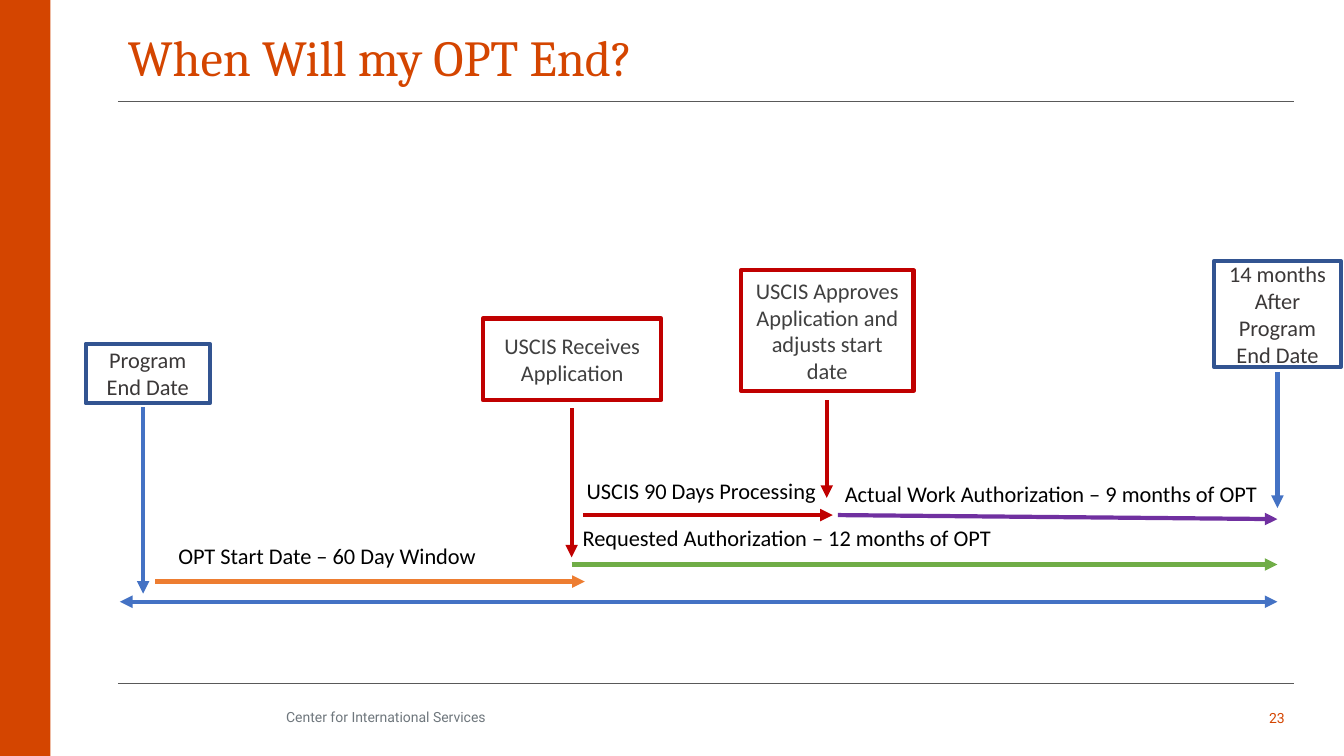
from dataclasses import dataclass

from lxml import etree
from pptx import Presentation
from pptx.dml.color import RGBColor
from pptx.enum import shapes, text
from pptx.oxml import ns
from pptx.slide import Slide
from pptx.util import Inches, Pt


@dataclass(frozen=True)
class Theme:
    orange: str = "D44500"
    grey: str = "6F777D"
    rule: str = "595959"
    blue: str = "4472C4"
    navy: str = "325491"
    red: str = "C00000"
    amber: str = "ED7D31"
    green: str = "70AD47"
    purple: str = "7030A0"
    black: str = "000000"
    date_text: str = "3B3838"
    step_text: str = "404040"
    heading: str = "Cambria"
    body: str = "Calibri"
    footer: str = "Roboto"
    title_size: float = 36
    label_size: float = 16
    footer_size: float = 10
    arrow_width: float = 3
    rule_width: float = 0.5


THEME = Theme()
Box = tuple[float, float, float, float]
Point = tuple[float, float]


@dataclass(frozen=True)
class Label:
    words: str
    box: Box
    color: str = THEME.black
    font: str = THEME.body
    size: float = THEME.label_size
    align: text.PP_ALIGN = text.PP_ALIGN.LEFT
    anchor: text.MSO_ANCHOR = text.MSO_ANCHOR.TOP
    spacing: float = 1.0


@dataclass(frozen=True)
class Line:
    start: Point
    end: Point
    color: str
    width: float = THEME.arrow_width
    ends: tuple[str, ...] = ("tailEnd",)


@dataclass(frozen=True)
class Milestone:
    words: str
    box: Box
    outline: str
    color: str
    arrow: Line


@dataclass(frozen=True)
class Period:
    words: str
    box: Box
    arrow: Line


START_X, RECEIVED_X, APPROVED_X, END_X = 1.42, 5.67, 8.2, 12.67
RULE_LEFT, RULE_RIGHT = 1.17, 12.83

HEADINGS = (
    Label("When Will my OPT End?", (RULE_LEFT, 0.28, 11.67, 0.69), THEME.orange,
          THEME.heading, THEME.title_size, spacing=0.9),
    Label("Center for International Services", (2.74, 6.93, 9.43, 0.39), THEME.grey,
          THEME.footer, THEME.footer_size, anchor=text.MSO_ANCHOR.MIDDLE, spacing=0.9),
    Label("23", (12.17, 6.92, 0.67, 0.4), THEME.orange, THEME.footer,
          THEME.footer_size, text.PP_ALIGN.RIGHT, text.MSO_ANCHOR.MIDDLE),
)

MILESTONES = (
    Milestone("Program End Date", (0.85, 3.41, 1.23, 0.59), THEME.navy, THEME.date_text,
              Line((START_X, 4.04), (START_X, 5.89), THEME.blue)),
    Milestone("USCIS Receives Application", (4.79, 3.16, 1.77, 0.81), THEME.red,
              THEME.step_text, Line((RECEIVED_X, 4.05), (RECEIVED_X, 5.53), THEME.red)),
    Milestone("USCIS Approves Application and adjusts start date",
              (7.35, 2.68, 1.71, 1.2), THEME.red, THEME.step_text,
              Line((APPROVED_X, 3.97), (APPROVED_X, 4.94), THEME.red)),
    Milestone("14 months After\nProgram End Date", (12.04, 2.59, 1.26, 1.05), THEME.navy,
              THEME.date_text, Line((END_X, 3.69), (END_X, 5.04), THEME.blue)),
)

PERIODS = (
    Period("OPT Start Date – 60 Day Window", (1.67, 5.33, 4, 0.37),
           Line((1.54, 5.77), (5.8, 5.77), THEME.amber)),
    Period("Requested Authorization – 12 months of OPT", (5.68, 5.15, 5.82, 0.37),
           Line((RECEIVED_X, 5.6), (END_X, 5.6), THEME.green)),
    Period("USCIS 90 Days Processing", (5.72, 4.68, 2.58, 0.37),
           Line((5.78, 5.11), (8.26, 5.11), THEME.red)),
    Period("Actual Work Authorization – 9 months of OPT", (8.28, 4.71, 4.41, 0.37),
           Line((8.31, 5.11), (END_X, 5.15), THEME.purple)),
)


def write(frame: text.MSO_ANCHOR, label: Label) -> None:
    frame.text = label.words
    frame_format = {"word_wrap": True, "vertical_anchor": label.anchor}
    for name, value in frame_format.items():
        setattr(frame, name, value)
    for paragraph in frame.paragraphs:
        paragraph.alignment = label.align
        paragraph.line_spacing = label.spacing
        for run in paragraph.runs:
            for name, value in {"name": label.font, "size": Pt(label.size)}.items():
                setattr(run.font, name, value)
            run.font.color.rgb = RGBColor.from_string(label.color)


def draw_label(slide: Slide, label: Label) -> None:
    write(slide.shapes.add_textbox(*map(Inches, label.box)).text_frame, label)


def draw_line(slide: Slide, line: Line) -> None:
    connector = slide.shapes.add_connector(
        shapes.MSO_CONNECTOR.STRAIGHT, *map(Inches, line.start + line.end))
    connector.line.color.rgb = RGBColor.from_string(line.color)
    connector.line.width = Pt(line.width)
    outline = connector.line._get_or_add_ln()
    for end in line.ends:
        etree.SubElement(outline, ns.qn(f"a:{end}"), type="triangle")
    etree.SubElement(connector._element.spPr, ns.qn("a:effectLst"))


def draw_milestone(slide: Slide, milestone: Milestone) -> None:
    draw_line(slide, milestone.arrow)
    frame = slide.shapes.add_shape(
        shapes.MSO_SHAPE.RECTANGLE, *map(Inches, milestone.box))
    frame.shadow.inherit = False
    frame.fill.background()
    frame.line.color.rgb = RGBColor.from_string(milestone.outline)
    frame.line.width = Pt(THEME.arrow_width)
    write(frame.text_frame, Label(
        milestone.words, milestone.box, milestone.color,
        align=text.PP_ALIGN.CENTER, anchor=text.MSO_ANCHOR.MIDDLE))


def draw_period(slide: Slide, period: Period) -> None:
    draw_line(slide, period.arrow)
    draw_label(slide, Label(period.words, period.box))


def main() -> None:
    deck = Presentation()
    deck.slide_width, deck.slide_height = Inches(13.33), Inches(7.5)
    slide = deck.slides.add_slide(deck.slide_layouts[6])

    side_band = slide.shapes.add_shape(
        shapes.MSO_SHAPE.RECTANGLE, 0, 0, Inches(0.5), deck.slide_height)
    side_band.shadow.inherit = False
    side_band.fill.solid()
    side_band.fill.fore_color.rgb = RGBColor.from_string(THEME.orange)
    side_band.line.fill.background()

    for y in (1.01, 6.78):
        draw_line(slide, Line((RULE_LEFT, y), (RULE_RIGHT, y),
                              THEME.rule, THEME.rule_width, ()))
    for heading in HEADINGS:
        draw_label(slide, heading)
    draw_line(slide, Line((1.19, 5.97), (END_X, 5.97), THEME.blue,
                          ends=("headEnd", "tailEnd")))
    for milestone in MILESTONES:
        draw_milestone(slide, milestone)
    for period in PERIODS:
        draw_period(slide, period)
    deck.save("out.pptx")


if __name__ == "__main__":
    main()
